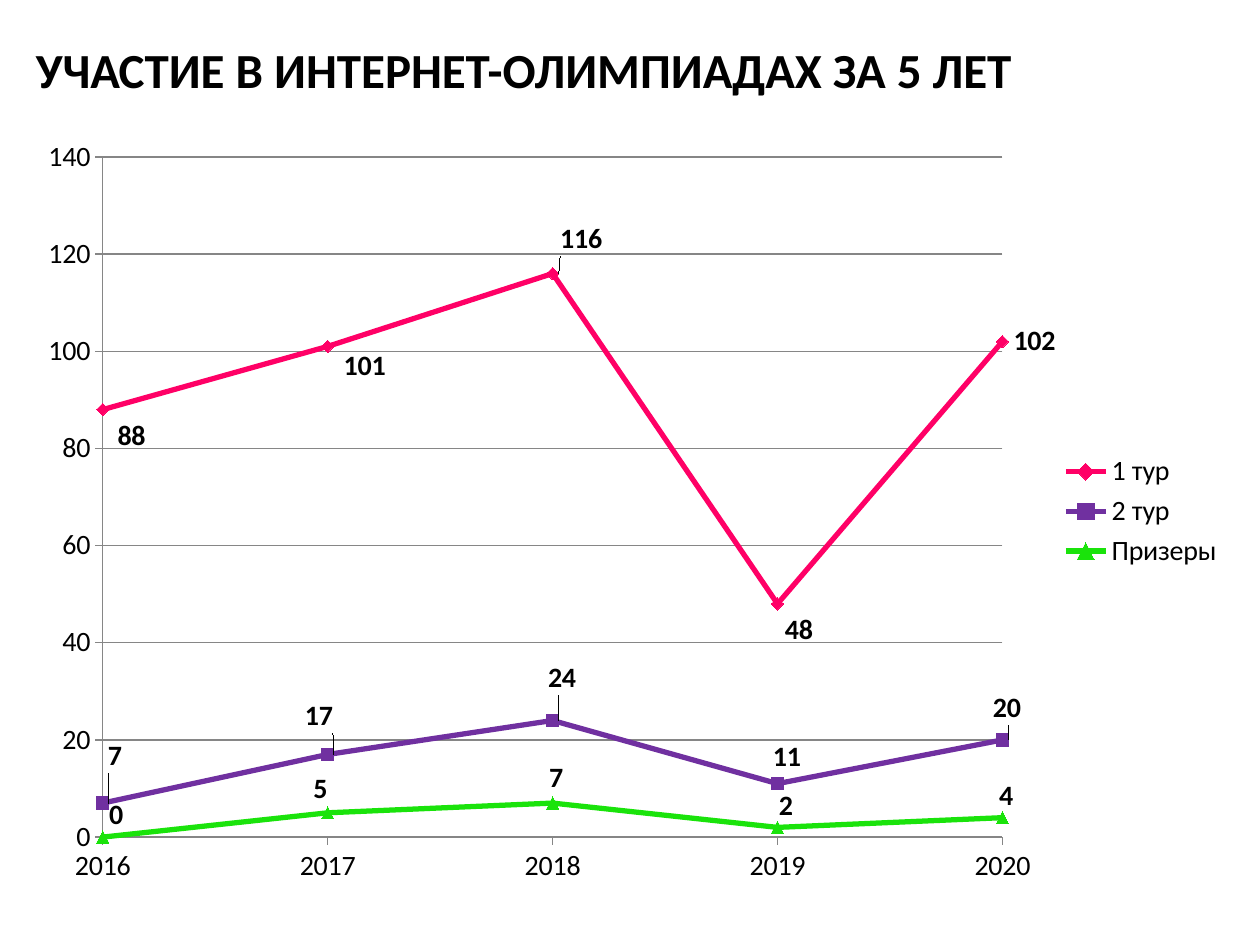
"""Build a slide with a smooth line chart of olympiad participation over five years."""
from pptx import Presentation
from pptx import util as u
from pptx.chart.data import XyChartData
from pptx.dml.color import RGBColor
from pptx.enum import chart as kinds, text
from pptx.oxml import parse_xml
from pptx.oxml.ns import nsdecls

BLACK = RGBColor(0x00, 0x00, 0x00)
GREY = RGBColor(0x86, 0x86, 0x86)
PINK = RGBColor(0xFF, 0x00, 0x66)
PURPLE = RGBColor(0x70, 0x30, 0xA0)
GREEN = RGBColor(0x1A, 0xE3, 0x0B)
FONT = "Calibri"
YEARS = range(2016, 2021)
MARKER = kinds.XL_MARKER_STYLE

ROUNDS = [
    ("1 тур", PINK, MARKER.DIAMOND, [88, 101, 116, 48, 102],
     [(0.003, 0.034), (0.004, 0.026), (-0.003, -0.044), (-0.003, 0.034), (0, 0)]),
    ("2 тур", PURPLE, MARKER.SQUARE, [7, 17, 24, 11, 20],
     [(-0.005, -0.06), (-0.028, -0.049), (-0.013, -0.054), (-0.013, -0.034), (-0.017, -0.041)]),
    ("Призеры", GREEN, MARKER.TRIANGLE, [0, 5, 7, 2, 4],
     [(-0.004, -0.028), (-0.021, -0.031), (-0.012, -0.032), (-0.008, -0.027), (-0.012, -0.028)]),
]


def write_text(frame, content, size, bold, color, align):
    para = frame.paragraphs[0]
    para.alignment = align
    span = para.add_run()
    span.text = content
    span.font.name, span.font.size, span.font.bold = FONT, u.Pt(size), bold
    span.font.color.rgb = color


def manual_layout(**values):
    items = "".join(f'<c:{name} val="{value}"/>' for name, value in values.items())
    return parse_xml(f'<c:layout {nsdecls("c")}><c:manualLayout>{items}</c:manualLayout></c:layout>')


deck = Presentation()
deck.slide_width, deck.slide_height = u.Cm(25.4), u.Cm(19.05)
page = deck.slides.add_slide(deck.slide_layouts[5])

title = page.shapes.title
title.left, title.top, title.width, title.height = u.Cm(0), u.Cm(0.53), u.Cm(21.11), u.Cm(1.73)
title.text_frame.vertical_anchor = text.MSO_ANCHOR.MIDDLE
write_text(title.text_frame, "УЧАСТИЕ В ИНТЕРНЕТ-ОЛИМПИАДАХ ЗА 5 ЛЕТ",
           size=28, bold=True, color=BLACK, align=text.PP_ALIGN.CENTER)

data = XyChartData()
for name, color, marker, values, offsets in ROUNDS:
    entry = data.add_series(name)
    for year, value in zip(YEARS, values):
        entry.add_data_point(year, value)

chart = page.shapes.add_chart(kinds.XL_CHART_TYPE.XY_SCATTER_SMOOTH, u.Cm(0.51), u.Cm(2.51),
                              u.Cm(24.41), u.Cm(15.6), data).chart
chart.has_title = False
chart.font.name, chart.font.size = FONT, u.Pt(16)
chart.font.color.rgb = BLACK
chart.has_legend = True
chart.legend.position = kinds.XL_LEGEND_POSITION.RIGHT
chart.legend.include_in_layout = False
chart.legend.font.name, chart.legend.font.size = FONT, u.Pt(16)
chart.plots[0].vary_by_categories = False

plot_area = chart._chartSpace.xpath("c:chart/c:plotArea")[0]
for old in plot_area.xpath("c:layout"):
    plot_area.remove(old)
plot_area.insert(0, manual_layout(layoutTarget="inner", xMode="edge", yMode="edge",
                                  x=0.064, y=0.042, w=0.743, h=0.879))

for axis, low, high, step in ((chart.category_axis, 2016, 2020, 1), (chart.value_axis, 0, 140, 20)):
    axis.minimum_scale, axis.maximum_scale, axis.major_unit = low, high, step
    axis.major_tick_mark = kinds.XL_TICK_MARK.OUTSIDE
    axis.minor_tick_mark = kinds.XL_TICK_MARK.NONE
    axis.tick_labels.font.size = u.Pt(16)
    axis.tick_labels.font.name = FONT
    axis.tick_labels.number_format = "General"
    axis.tick_labels.number_format_is_linked = False
    axis.format.line.color.rgb = GREY
    axis.format.line.width = u.Pt(0.75)
chart.category_axis.has_major_gridlines = False
chart.value_axis.has_major_gridlines = True
chart.value_axis.major_gridlines.format.line.color.rgb = GREY
chart.value_axis.major_gridlines.format.line.width = u.Pt(0.75)

for series, (name, color, marker, values, offsets) in zip(chart.plots[0].series, ROUNDS):
    series.format.line.color.rgb = color
    series.format.line.width = u.Pt(3)
    series.marker.style, series.marker.size = marker, 7
    series.marker.format.fill.solid()
    series.marker.format.fill.fore_color.rgb = color
    series.marker.format.line.color.rgb = color
    for index, (shift_x, shift_y) in enumerate(offsets):
        label = series.points[index].data_label
        label.font.name, label.font.size, label.font.bold = FONT, u.Pt(16), True
        label.font.color.rgb = BLACK
        label.position = kinds.XL_LABEL_POSITION.RIGHT
        if shift_x or shift_y:
            order = series._element.xpath(f"c:dLbls/c:dLbl/c:idx[@val='{index}']")[0]
            order.addnext(manual_layout(x=shift_x, y=shift_y))

deck.save("out.pptx")
